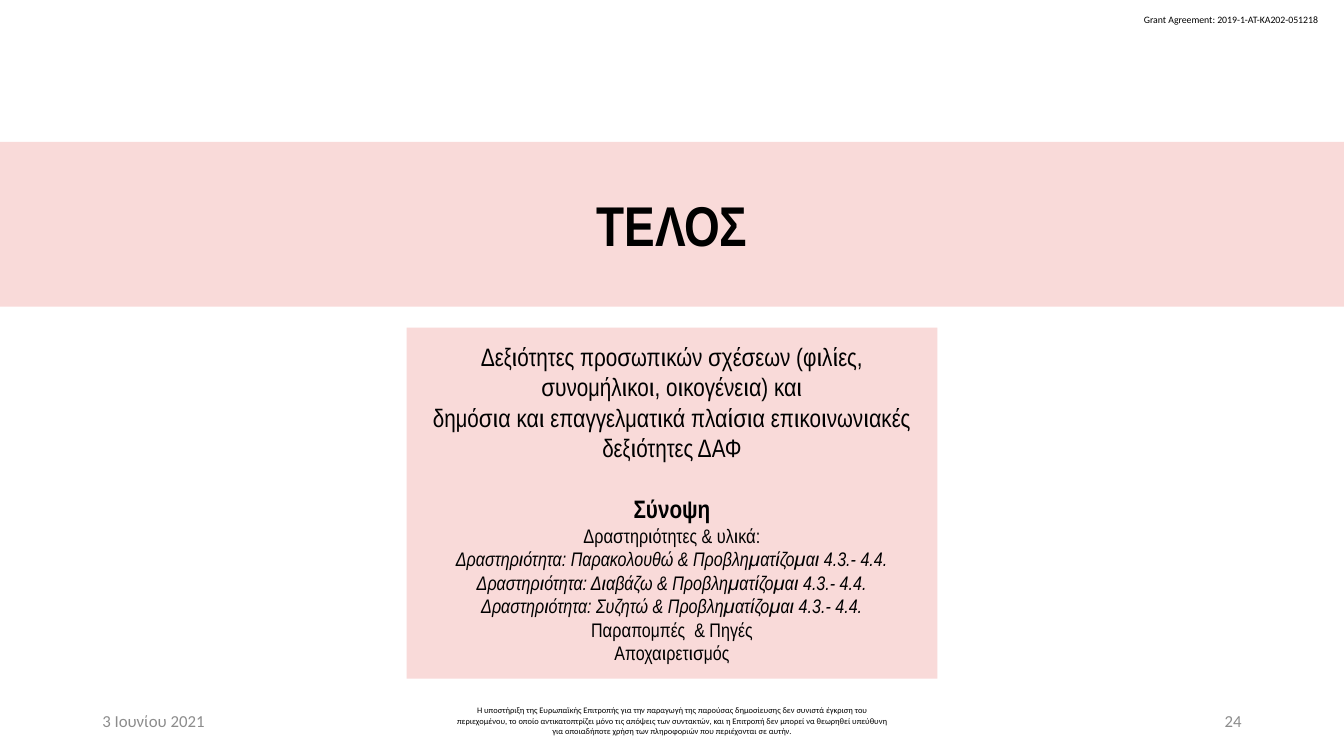
from pptx import Presentation
from pptx.dml.color import RGBColor
from pptx.enum.shapes import MSO_SHAPE
from pptx.enum.text import MSO_ANCHOR, MSO_AUTO_SIZE, PP_ALIGN
from pptx.util import Inches, Pt

LEFT, CENTER, RIGHT = PP_ALIGN.LEFT, PP_ALIGN.CENTER, PP_ALIGN.RIGHT
TOP, MIDDLE = MSO_ANCHOR.TOP, MSO_ANCHOR.MIDDLE
RECTANGLE = MSO_SHAPE.RECTANGLE
NO_AUTOFIT = MSO_AUTO_SIZE.NONE

COLORS = {"pink": "F9DAD9", "black": "000000", "gray": "8C8C8C"}
HEADING, BODY = "Arial Narrow", "Calibri"
COLS, ROWS = 160, 90


class Deck:
    """Places elements on a grid of 160 columns by 90 rows."""

    def __init__(self):
        self.prs = Presentation()
        self.prs.slide_width, self.prs.slide_height = Inches(13.333), Inches(7.5)
        self.s = self.prs.slides.add_slide(self.prs.slide_layouts[5])

    def box(self, col, row, cols, rows):
        w, h = self.prs.slide_width / COLS, self.prs.slide_height / ROWS
        return [int(v) for v in (col * w, row * h, cols * w, rows * h)]

    def set_text(self, tf, lines, align, anchor=MIDDLE, wrap=True, inset=(0.1, 0.05)):
        dx, dy = (Inches(v) for v in inset)
        frame = {"word_wrap": wrap, "auto_size": NO_AUTOFIT, "vertical_anchor": anchor,
                 "margin_left": dx, "margin_right": dx, "margin_top": dy, "margin_bottom": dy}
        for name, value in frame.items():
            setattr(tf, name, value)
        for i, (text, fmt) in enumerate(lines):
            fmt = dict(fmt)
            p = tf.paragraphs[0] if i == 0 else tf.add_paragraph()
            p.alignment = align
            p.space_before = Pt(fmt.pop("before", 0))
            r = p.add_run()
            r.text = text
            r.font.color.rgb = RGBColor.from_string(COLORS[fmt.pop("color", "black")])
            r.font.size = Pt(fmt.pop("size"))
            for name, value in fmt.items():
                setattr(r.font, name, value)

    def fill(self, sp):
        sp.fill.solid()
        sp.fill.fore_color.rgb = RGBColor.from_string(COLORS["pink"])
        sp.line.fill.background()

    def title(self, grid, text, fmt):
        sp = self.s.shapes.title
        sp.left, sp.top, sp.width, sp.height = self.box(*grid)
        self.fill(sp)
        self.set_text(sp.text_frame, [(text, fmt)], CENTER, inset=(0.13, 0.07))

    def panel(self, grid, lines):
        sp = self.s.shapes.add_shape(RECTANGLE, *self.box(*grid))
        sp.shadow.inherit = False
        self.fill(sp)
        self.set_text(sp.text_frame, lines, CENTER, inset=(0.13, 0.07))

    def text(self, grid, text, fmt, align=LEFT, **frame):
        sp = self.s.shapes.add_textbox(*self.box(*grid))
        self.set_text(sp.text_frame, [(text, {"name": BODY, **fmt})], align, **frame)


def main():
    deck = Deck()

    # Grant reference in the top corner
    deck.text((135, 1, 23.6, 2.6), "Grant Agreement: 2019-1-AT-KA202-051218",
              {"size": 7}, anchor=TOP, wrap=False)

    # Title band
    deck.title((0, 16.9, COLS, 19.6), "ΤΕΛΟΣ", {"name": HEADING, "size": 40, "bold": True})

    # Summary panel
    topic = {"name": HEADING, "size": 18, "bold": False}
    item = {**topic, "size": 14}
    activity = {**item, "italic": True}
    deck.panel((48.4, 39, 63.2, 41.8), [
        ("Δεξιότητες προσωπικών σχέσεων (φιλίες, συνομήλικοι, οικογένεια) και", topic),
        ("δημόσια και επαγγελματικά πλαίσια επικοινωνιακές δεξιότητες ΔΑΦ", topic),
        ("Σύνοψη", {**topic, "bold": True, "before": 22}),
        ("Δραστηριότητες & υλικά:", item),
        *[(f"Δραστηριότητα: {verb} & Προβληματίζομαι 4.3.- 4.4.", activity)
          for verb in ("Παρακολουθώ", "Διαβάζω", "Συζητώ")],
        ("Παραπομπές  & Πηγές", item),
        ("Αποχαιρετισμός", item),
    ])

    # Footer: date, disclaimer, slide number
    small, muted = {"size": 6}, {"size": 12, "color": "gray"}
    disclaimer = (
        "Η υποστήριξη της Ευρωπαϊκής Επιτροπής για την παραγωγή της παρούσας δημοσίευσης "
        "δεν συνιστά έγκριση του περιεχομένου, το οποίο αντικατοπτρίζει μόνο τις απόψεις "
        "των συντακτών, και η Επιτροπή δεν μπορεί να θεωρηθεί υπεύθυνη για οποιαδήποτε "
        "χρήση των πληροφοριών που περιέχονται σε αυτήν.")
    for col, cols, text, fmt, align in (
            (11, 36, "3 Ιουνίου 2021", muted, LEFT),
            (53, 54, disclaimer, small, CENTER),
            (113, 36, "24", muted, RIGHT)):
        deck.text((col, 83.4, cols, 4.8), text, fmt, align)

    deck.prs.save("out.pptx")


if __name__ == "__main__":
    main()
